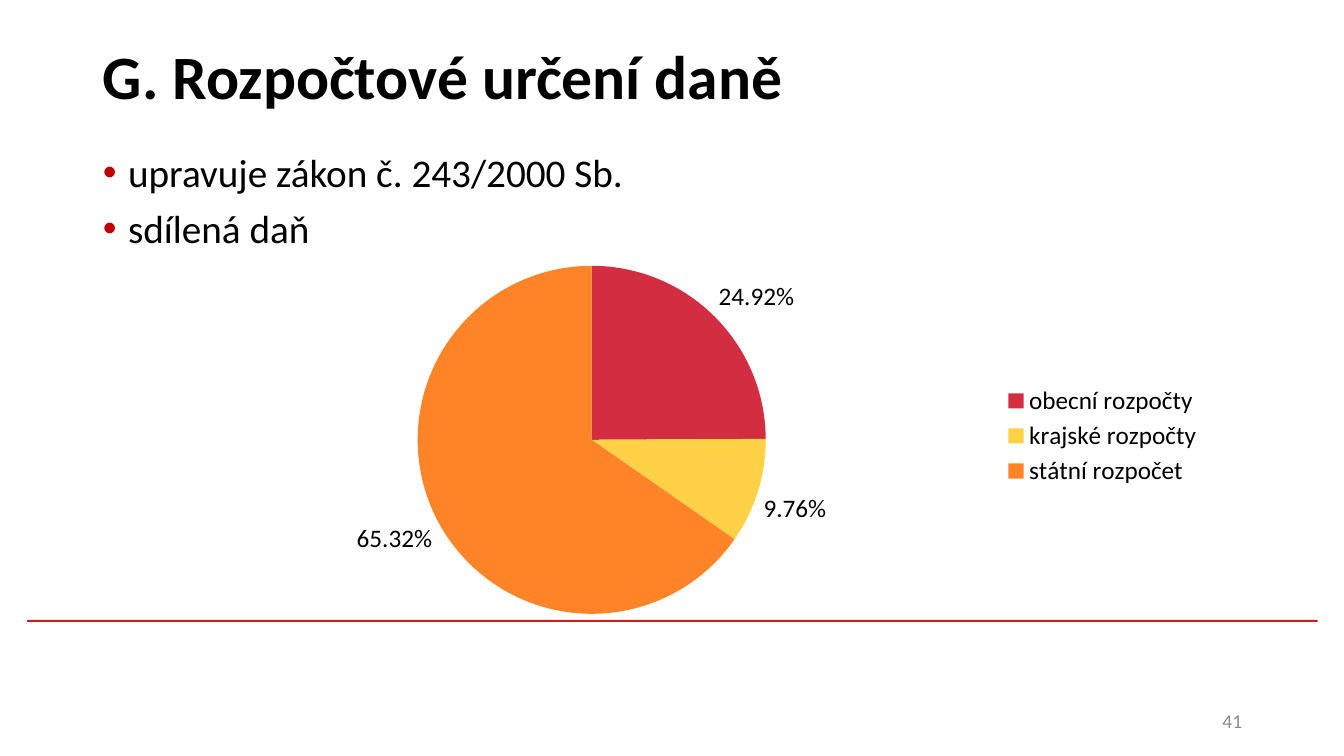
from lxml import etree
from pptx import Presentation
from pptx.chart.data import CategoryChartData
from pptx.dml.color import RGBColor
from pptx.enum import chart as ch, shapes, text
from pptx.oxml.ns import qn
from pptx.util import Inches, Pt

BLACK = RGBColor(0, 0, 0)
GREY = RGBColor(0x8C, 0x8C, 0x8C)
RULE_RED = RGBColor(0xCD, 0x1F, 0x21)
BUDGETS = [
    ("obecní rozpočty", 0.2492, RGBColor(0xD2, 0x2D, 0x40)),
    ("krajské rozpočty", 0.0976, RGBColor(0xFF, 0xD1, 0x47)),
    ("státní rozpočet", 0.6532, RGBColor(0xFF, 0x84, 0x27)),
]


def style(font, size, color, bold=False):
    font.name, font.size, font.bold = "Calibri", Pt(size), bold
    font.color.rgb = color


def set_layout(parent, index, **box):
    """Place a chart part by fractions of the chart's size."""
    for old in parent.findall(qn("c:layout")):
        parent.remove(old)
    layout = etree.Element(qn("c:layout"))
    parent.insert(index, layout)
    manual = etree.SubElement(layout, qn("c:manualLayout"))
    if "plotArea" in parent.tag:
        etree.SubElement(manual, qn("c:layoutTarget"), val="inner")
    for axis in "xy":
        etree.SubElement(manual, qn(f"c:{axis}Mode"), val="edge")
    for name, value in box.items():
        etree.SubElement(manual, qn(f"c:{name}"), val=str(value))


prs = Presentation()
prs.slide_width, prs.slide_height = Inches(13.33), Inches(7.5)
s = prs.slides.add_slide(prs.slide_layouts[1])

# Red rule
rule = s.shapes.add_shape(shapes.MSO_SHAPE.RECTANGLE, Inches(0.27), Inches(6.15),
                          Inches(12.8), Inches(0.02))
rule.shadow.inherit = False
rule.fill.solid()
rule.fill.fore_color.rgb = RULE_RED
rule.line.fill.background()

# Title
title = s.shapes.title
title.left, title.top, title.width, title.height = map(Inches, (0.92, 0.02, 11.5, 1.45))
tf = title.text_frame
tf.text = "G. Rozpočtové určení daně"
tf.auto_size = text.MSO_AUTO_SIZE.NONE
tf.vertical_anchor = text.MSO_ANCHOR.MIDDLE
tf.paragraphs[0].alignment = text.PP_ALIGN.LEFT
style(tf.paragraphs[0].runs[0].font, 44, BLACK, bold=True)

# Bullets
body = s.placeholders[1]
body.left, body.top, body.width, body.height = map(Inches, (0.92, 1.47, 11.5, 4.57))
tf = body.text_frame
tf.text = "upravuje zákon č. 243/2000 Sb.\nsdílená daň"
tf.auto_size = text.MSO_AUTO_SIZE.NONE
for i, p in enumerate(tf.paragraphs):
    p.line_spacing = 0.9
    p.space_before = Pt(10 if i else 0)
    pPr = p._p.get_or_add_pPr()
    pPr.set("marL", str(Inches(0.25)))
    pPr.set("indent", str(-Inches(0.25)))
    color = etree.SubElement(pPr, qn("a:buClr"))
    etree.SubElement(color, qn("a:srgbClr"), val="C00000")
    etree.SubElement(pPr, qn("a:buFont"), typeface="Arial")
    etree.SubElement(pPr, qn("a:buChar"), char="•")
    style(p.runs[0].font, 28, BLACK)

# Slide number
number = s.shapes.add_textbox(Inches(9.42), Inches(6.95), Inches(3), Inches(0.4))
tf = number.text_frame
tf.word_wrap = True
tf.vertical_anchor = text.MSO_ANCHOR.MIDDLE
tf.text = "41"
tf.paragraphs[0].alignment = text.PP_ALIGN.RIGHT
style(tf.paragraphs[0].runs[0].font, 14, GREY)

# Tax share pie
data = CategoryChartData(number_format="0.00%")
data.categories = [name for name, _, _ in BUDGETS]
data.add_series("Series 1", [share for _, share, _ in BUDGETS])
chart = s.shapes.add_chart(ch.XL_CHART_TYPE.PIE, Inches(1.15), Inches(2.38),
                           Inches(11.51), Inches(3.89), data).chart
style(chart.font, 18, BLACK)
chart.has_title = False
chart.has_legend = True
chart.legend.position = ch.XL_LEGEND_POSITION.RIGHT
chart.legend.include_in_layout = False
style(chart.legend.font, 18, BLACK)

plot = chart.plots[0]
plot.vary_by_categories = True
for i, (_, _, color) in enumerate(BUDGETS):
    fill = plot.series[0].points[i].format.fill
    fill.solid()
    fill.fore_color.rgb = color
plot.has_data_labels = True
labels = plot.data_labels
labels.show_value = True
labels.show_percentage = False
labels.number_format = "0.00%"
labels.number_format_is_linked = False
labels.position = ch.XL_LABEL_POSITION.OUTSIDE_END
style(labels.font, 18, BLACK)

set_layout(chart._chartSpace.chart.plotArea, 0, x=0.26, y=0.06, w=0.3, h=0.9)
set_layout(chart.legend._element, 1, x=0.76, y=0.36, w=0.18, h=0.28)

prs.save("out.pptx")
